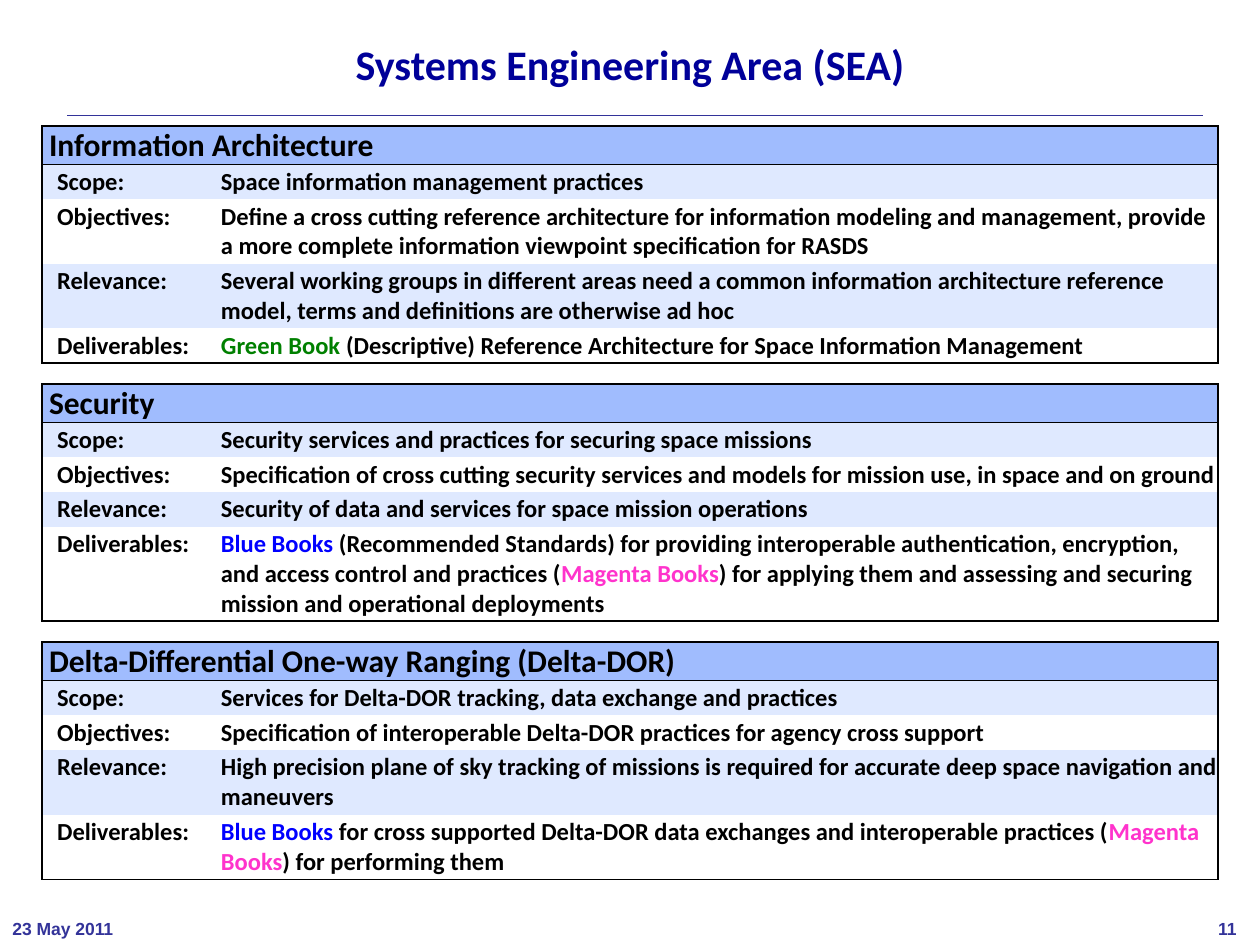
from typing import NamedTuple

from lxml.etree import SubElement
from pptx import Presentation
from pptx.dml.color import RGBColor
from pptx.enum.shapes import MSO_CONNECTOR
from pptx.enum.text import PP_ALIGN
from pptx.oxml.ns import qn
from pptx.util import Pt

BLACK = RGBColor(0x00, 0x00, 0x00)
WHITE = RGBColor(0xFF, 0xFF, 0xFF)
NAVY = RGBColor(0x00, 0x00, 0x99)
INDIGO = RGBColor(0x33, 0x33, 0x99)
HEADER_BLUE = RGBColor(0xA0, 0xBC, 0xFE)
PALE_BLUE = RGBColor(0xDF, 0xE9, 0xFF)
GREEN = RGBColor(0x00, 0x80, 0x00)
BLUE = RGBColor(0x00, 0x00, 0xFF)
MAGENTA = RGBColor(0xFF, 0x33, 0xCC)

LABELS = ("Scope:", "Objectives:", "Relevance:", "Deliverables:")
COLUMN_WIDTHS = (102.24, 569.76)
HEADER_HEIGHT = 22
SPACER_HEIGHT = 12
LINE_HEIGHT = 17
CELL_MARGIN = 1.44


class Span(NamedTuple):
    """A stretch of text in one colour."""
    text: str
    color: RGBColor = BLACK


class Entry(NamedTuple):
    """One description and the number of lines it fills."""
    spans: list[Span]
    lines: int = 1


class WorkingArea(NamedTuple):
    """A headed block with one entry for each label."""
    name: str
    entries: list[Entry]


AREAS = [
    WorkingArea("Information Architecture", [
        Entry([Span("Space information management practices")]),
        Entry([Span("Define a cross cutting reference architecture for information modeling and "
                    "management, provide a more complete information viewpoint specification for RASDS")], 2),
        Entry([Span("Several working groups in different areas need a common information "
                    "architecture reference model, terms and definitions are otherwise ad hoc")], 2),
        Entry([Span("Green Book ", GREEN),
               Span("(Descriptive) Reference Architecture for Space Information Management")]),
    ]),
    WorkingArea("Security", [
        Entry([Span("Security services and practices for securing space missions")]),
        Entry([Span("Specification of cross cutting security services and models for mission use, "
                    "in space and on ground")]),
        Entry([Span("Security of data and services for space mission operations")]),
        Entry([Span("Blue Books ", BLUE),
               Span("(Recommended Standards) for providing interoperable authentication, encryption, "
                    "and access control and practices ("),
               Span("Magenta Books", MAGENTA),
               Span(") for applying them and assessing and securing mission and operational deployments")], 3),
    ]),
    WorkingArea("Delta-Differential One-way Ranging (Delta-DOR)", [
        Entry([Span("Services for Delta-DOR tracking, data exchange and practices")]),
        Entry([Span("Specification of interoperable Delta-DOR practices for agency cross support")]),
        Entry([Span("High precision plane of sky tracking of missions is required for accurate deep "
                    "space navigation and maneuvers")], 2),
        Entry([Span("Blue Books ", BLUE),
               Span("for cross supported Delta-DOR data exchanges and interoperable practices ("),
               Span("Magenta Books", MAGENTA),
               Span(") for performing them")], 2),
    ]),
]


def add_span(para, text: str, *, size: float = 14, color: RGBColor = BLACK, name: str = "Calibri") -> None:
    """Append bold text to a paragraph."""
    span = para.add_run()
    span.text = text
    span.font.size = Pt(size)
    span.font.bold = True
    span.font.name = name
    span.font.color.rgb = color


def add_text(page, text: str, left: float, top: float, width: float, height: float, *,
             align=PP_ALIGN.LEFT, spacing: float = 1.0, **style) -> None:
    """Place a single paragraph in a text box."""
    box = page.shapes.add_textbox(Pt(left), Pt(top), Pt(width), Pt(height))
    box.text_frame.word_wrap = True
    para = box.text_frame.paragraphs[0]
    para.alignment = align
    para.line_spacing = spacing
    add_span(para, text, **style)


def format_cell(cell, fill: RGBColor | None, sides: str, left: float = 0, margin: float = 0) -> None:
    """Set the borders, fill and margins of a cell."""
    properties = cell._tc.get_or_add_tcPr()
    for side in "LRTB":
        line = SubElement(properties, qn(f"a:ln{side}"), w=str(Pt(1)))
        if side in sides:
            solid = SubElement(line, qn("a:solidFill"))
            SubElement(solid, qn("a:srgbClr"), val=str(BLACK))
        else:
            SubElement(line, qn("a:noFill"))
    if fill is None:
        cell.fill.background()
    else:
        cell.fill.solid()
        cell.fill.fore_color.rgb = fill
    cell.margin_left, cell.margin_right = Pt(left), Pt(0)
    cell.margin_top = cell.margin_bottom = Pt(margin)


def add_spacer(table, row: int) -> None:
    """Make an empty row between two areas."""
    table.rows[row].height = Pt(SPACER_HEIGHT)
    table.cell(row, 0).merge(table.cell(row, 1))
    for cell in table.rows[row].cells:
        format_cell(cell, None, "TB")
        SubElement(cell.text_frame.paragraphs[0]._p, qn("a:endParaRPr"), sz="800")


def add_area(table, row: int, area: WorkingArea) -> None:
    """Fill the heading and labelled rows of an area."""
    table.rows[row].height = Pt(HEADER_HEIGHT)
    heading = table.cell(row, 0)
    heading.merge(table.cell(row, 1))
    for cell in table.rows[row].cells:
        format_cell(cell, HEADER_BLUE, "LRTB", left=4)
    add_span(heading.text_frame.paragraphs[0], area.name, size=18)
    for index, (label, entry) in enumerate(zip(LABELS, area.entries)):
        line = table.rows[row + 1 + index]
        line.height = Pt(entry.lines * LINE_HEIGHT + 2 * CELL_MARGIN)
        fill = WHITE if index % 2 else PALE_BLUE
        edge = {0: "T", len(LABELS) - 1: "B"}.get(index, "")
        label_cell, entry_cell = line.cells
        format_cell(label_cell, fill, "L" + edge, left=8.64, margin=CELL_MARGIN)
        format_cell(entry_cell, fill, "R" + edge, margin=CELL_MARGIN)
        add_span(label_cell.text_frame.paragraphs[0], label)
        for span in entry.spans:
            add_span(entry_cell.text_frame.paragraphs[0], span.text, color=span.color)


def add_areas(page) -> None:
    """Add the table of all areas."""
    block = len(LABELS) + 2
    frame = page.shapes.add_table(block * len(AREAS) - 1, 2, Pt(24), Pt(72), Pt(sum(COLUMN_WIDTHS)), Pt(432))
    table = frame.table
    table.first_row = table.horz_banding = False
    for column, width in zip(table.columns, COLUMN_WIDTHS):
        column.width = Pt(width)
    for index, area in enumerate(AREAS):
        if index:
            add_spacer(table, index * block - 1)
        add_area(table, index * block, area)


def add_rule(page) -> None:
    """Draw the hairline below the title."""
    rule = page.shapes.add_connector(MSO_CONNECTOR.STRAIGHT, Pt(38.4), Pt(66), Pt(687.6), Pt(66))
    rule.line.width = Pt(0.12)
    rule.line.color.rgb = INDIGO
    SubElement(rule._element.spPr, qn("a:effectLst"))


def main() -> None:
    """Build and save the deck."""
    deck = Presentation()
    deck.slide_width, deck.slide_height = Pt(720), Pt(540)
    page = deck.slides.add_slide(deck.slide_layouts[6])
    add_rule(page)
    footer = {"size": 10, "color": INDIGO, "name": "Arial"}
    add_text(page, "11", 689, 521.3, 30, 18.7, **footer)
    add_text(page, "23 May 2011", 0, 521.3, 80, 18.7, **footer)
    add_text(page, "Systems Engineering Area (SEA)", 36, 21.6, 648, 38.2,
             align=PP_ALIGN.CENTER, spacing=0.9, size=24, color=NAVY)
    add_areas(page)
    deck.save("out.pptx")


if __name__ == "__main__":
    main()
